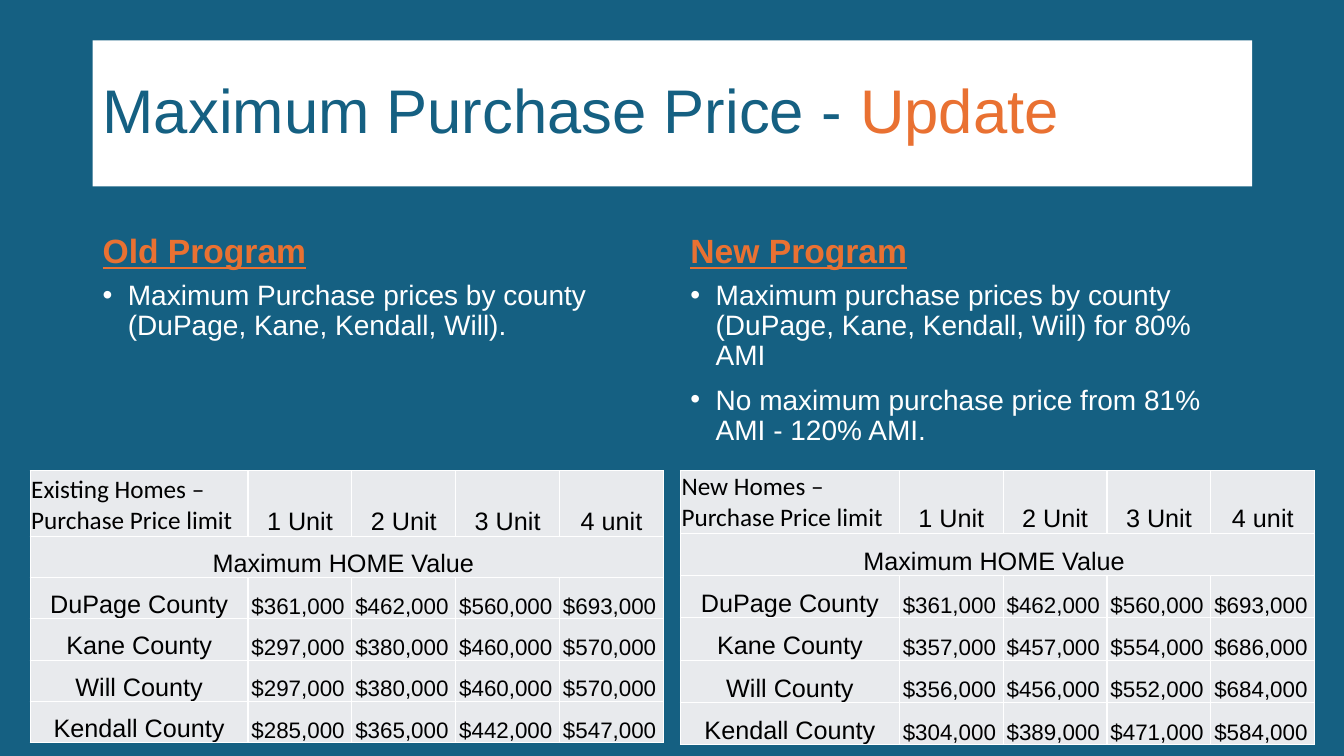
from lxml import etree
from pptx import Presentation
from pptx import util as u
from pptx.dml.color import RGBColor
from pptx.enum import shapes, text
from pptx.oxml.ns import qn

TEAL = RGBColor(0x15, 0x60, 0x82)
ORANGE = RGBColor(0xE9, 0x71, 0x32)
WHITE = RGBColor(0xFF, 0xFF, 0xFF)
BLACK = RGBColor(0, 0, 0)
GREY = RGBColor(0xE8, 0xEA, 0xED)

LEFT, CENTER, RIGHT = text.PP_ALIGN.LEFT, text.PP_ALIGN.CENTER, text.PP_ALIGN.RIGHT
TOP, MIDDLE, BOTTOM = text.MSO_ANCHOR.TOP, text.MSO_ANCHOR.MIDDLE, text.MSO_ANCHOR.BOTTOM

UNITS = ["1 Unit", "2 Unit", "3 Unit", "4 unit"]
COUNTIES = ["DuPage County", "Kane County", "Will County", "Kendall County"]
EXISTING_LIMITS = [[361, 462, 560, 693], [297, 380, 460, 570],
                   [297, 380, 460, 570], [285, 365, 442, 547]]
NEW_LIMITS = [[361, 462, 560, 693], [357, 457, 554, 686],
              [356, 456, 552, 684], [304, 389, 471, 584]]


def write(p, content, size=18, color=BLACK, font="Arial", bold=False,
          underline=False, align=LEFT, spacing=None, before=None):
    """Add a formatted run to a paragraph."""
    p.alignment = align
    if spacing:
        p.line_spacing = spacing
    if before:
        p.space_before = u.Pt(before)
    r = p.add_run()
    r.text = content
    r.font.name, r.font.size = font, u.Pt(size)
    r.font.bold, r.font.underline = bold, underline
    r.font.color.rgb = color


def add_bullet(p):
    pPr = p._p.get_or_add_pPr()
    pPr.set("marL", str(u.Inches(0.25)))
    pPr.set("indent", str(-u.Inches(0.25)))
    etree.SubElement(pPr, qn("a:buFont")).set("typeface", "Arial")
    etree.SubElement(pPr, qn("a:buChar")).set("char", "•")


def add_borders(cell, color, width):
    tcPr = cell._tc.get_or_add_tcPr()
    for side in ("lnL", "lnR", "lnT", "lnB"):
        ln = etree.SubElement(tcPr, qn(f"a:{side}"), w=str(u.Pt(width)))
        fill = etree.SubElement(ln, qn("a:solidFill"))
        etree.SubElement(fill, qn("a:srgbClr")).set("val", str(color))


class PriceSlide:
    def __init__(self, prs):
        self.s = prs.slides.add_slide(prs.slide_layouts[6])
        self.s.background.fill.solid()
        self.s.background.fill.fore_color.rgb = TEAL

    def title(self, x, y, w, h, parts):
        sp = self.s.shapes.add_shape(shapes.MSO_SHAPE.RECTANGLE, u.Inches(x),
                                     u.Inches(y), u.Inches(w), u.Inches(h))
        sp.shadow.inherit = False
        sp.fill.solid()
        sp.fill.fore_color.rgb = WHITE
        sp.line.fill.background()
        tf = sp.text_frame
        tf.word_wrap, tf.vertical_anchor = True, MIDDLE
        for content, color in parts:
            write(tf.paragraphs[0], content, size=44, color=color, spacing=0.9)

    def textbox(self, x, y, w, h, lines, anchor=TOP, bullets=False, **style):
        box = self.s.shapes.add_textbox(u.Inches(x), u.Inches(y),
                                        u.Inches(w), u.Inches(h))
        tf = box.text_frame
        tf.word_wrap, tf.vertical_anchor = True, anchor
        for i, line in enumerate(lines):
            p = tf.add_paragraph() if i else tf.paragraphs[0]
            write(p, line, spacing=0.9, before=10, **style)
            if bullets:
                add_bullet(p)

    def program(self, x, w, heading, points):
        self.textbox(x, 1.84, w, 0.9, [heading], anchor=BOTTOM, size=24,
                     color=ORANGE, bold=True, underline=True)
        self.textbox(x, 2.74, w, 4.03, points, bullets=True, size=20, color=WHITE)

    def cell(self, cell, content, **style):
        cell.margin_left = cell.margin_right = cell.margin_top = u.Inches(0.01)
        cell.margin_bottom = 0
        cell.vertical_anchor = BOTTOM
        add_borders(cell, WHITE, 1)
        cell.fill.solid()
        cell.fill.fore_color.rgb = GREY
        if content:
            write(cell.text_frame.paragraphs[0], content, **style)

    def price_table(self, x, label_w, head_h, row_h, label, limits):
        rows = [[label, *UNITS], ["Maximum HOME Value "] + [""] * 4]
        rows += [[county] + [f"${n},000 " for n in prices]
                 for county, prices in zip(COUNTIES, limits)]
        widths = [label_w] + [1.03] * 4
        heights = [head_h] + [row_h] * 5
        table = self.s.shapes.add_table(
            len(rows), len(widths), u.Inches(x), u.Inches(4.67),
            u.Inches(sum(widths)), u.Inches(sum(heights))).table
        table.first_row = table.horz_banding = False
        for col, width in zip(table.columns, widths):
            col.width = u.Inches(width)
        for row, height in zip(table.rows, heights):
            row.height = u.Inches(height)
        for i, row in enumerate(rows):
            for j, content in enumerate(row):
                style = {"align": CENTER}
                if i == j == 0:
                    style = {"font": "Calibri"}
                elif i > 1 and j:
                    style = {"align": RIGHT, "size": 16}
                self.cell(table.cell(i, j), content, **style)
        table.cell(1, 0).merge(table.cell(1, 4))


def main():
    prs = Presentation()
    prs.slide_width, prs.slide_height = u.Inches(13.33), u.Inches(7.5)
    slide = PriceSlide(prs)

    # Title band
    slide.title(0.92, 0.4, 11.5, 1.45,
                [("Maximum Purchase Price - ", TEAL), ("Update", ORANGE)])

    # Program comparison
    slide.program(0.92, 5.64, "Old Program", [
        "Maximum Purchase prices by county (DuPage, Kane, Kendall, Will)."])
    slide.program(6.75, 5.67, "New Program", [
        "Maximum purchase prices by county (DuPage, Kane, Kendall, Will) for 80% AMI",
        "No maximum purchase price from 81% AMI - 120% AMI."])

    # Price limit tables
    slide.price_table(0.3, 2.16, 0.65, 0.41,
                      "Existing Homes – Purchase Price limit", EXISTING_LIMITS)
    slide.price_table(6.75, 2.17, 0.62, 0.42,
                      "New Homes – Purchase Price limit", NEW_LIMITS)

    prs.save("out.pptx")


if __name__ == "__main__":
    main()
